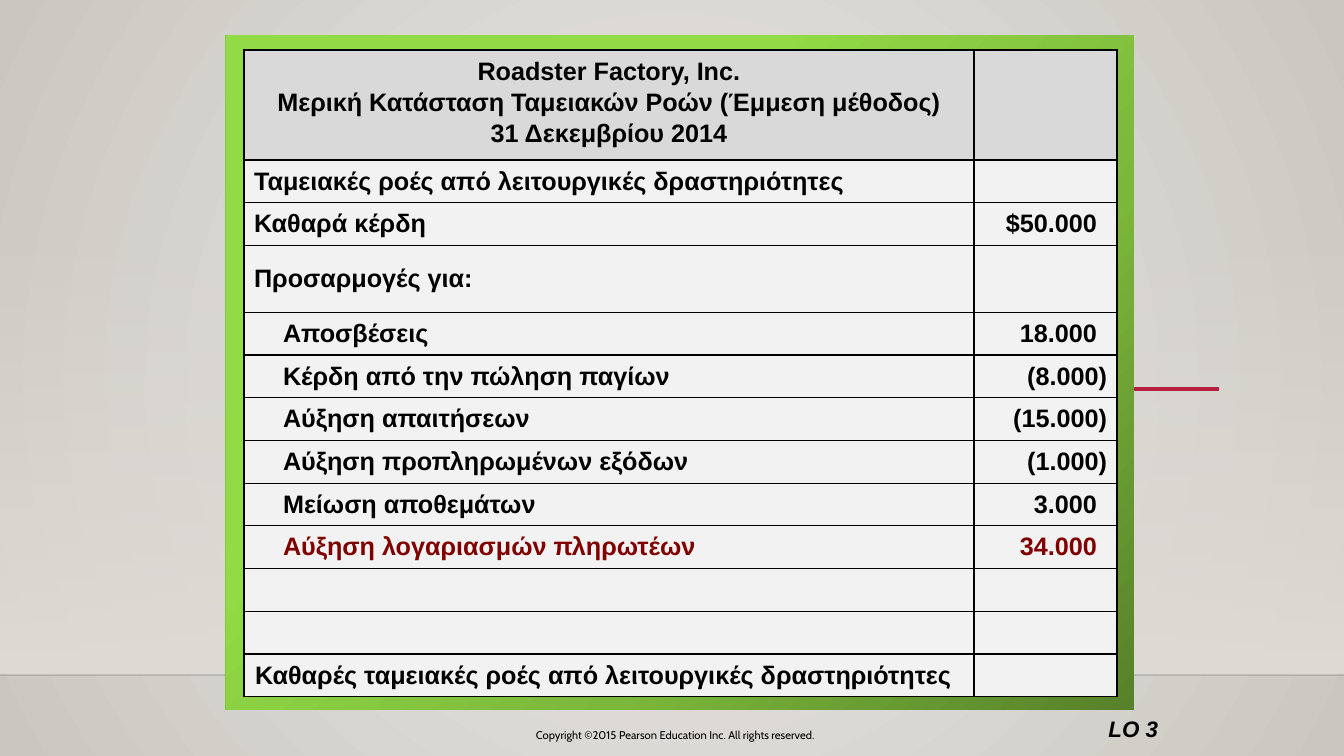
from dataclasses import dataclass

from lxml.etree import SubElement
from pptx import Presentation
from pptx.dml.color import RGBColor
from pptx.enum.shapes import MSO_CONNECTOR, MSO_SHAPE
from pptx.enum.text import MSO_ANCHOR, PP_ALIGN
from pptx.oxml.ns import qn
from pptx.util import Emu, Pt

BLACK = RGBColor(0x00, 0x00, 0x00)
MAROON = RGBColor(0x80, 0x00, 0x00)
CRIMSON = RGBColor(0xB7, 0x1E, 0x42)
HEADER_GREY = RGBColor(0xD9, 0xD9, 0xD9)
ROW_GREY = RGBColor(0xF2, 0xF2, 0xF2)
WALL_LIGHT = RGBColor(0xEC, 0xEA, 0xE7)
WALL_DARK = RGBColor(0xCA, 0xC7, 0xC1)
WALL_SHADE = RGBColor(0xDF, 0xDB, 0xD5)
GREEN_DARK = RGBColor(0x57, 0x81, 0x2A)
GREEN_MIDDLE = RGBColor(0x7B, 0xB7, 0x3B)
GREEN_LIGHT = RGBColor(0x92, 0xDA, 0x46)

EMU_PER_PX = 914400 / 100.8
SLIDE_WIDTH, SLIDE_HEIGHT = 1344, 756
FLOOR = 675
TABLE_LEFT, TABLE_TOP, TABLE_HEIGHT = 244, 50, 647
COLUMN_WIDTHS = (730, 143)
HEADER_HEIGHT, ADJUSTMENTS_HEIGHT = 110, 67
CELL_INSET, AMOUNT_INSET, ITEM_INDENT = 10, 20, 29


@dataclass(frozen=True)
class Stop:
    position: int
    color: RGBColor
    opacity: int = 100


@dataclass(frozen=True)
class Rule:
    left: int
    right: int
    y: int
    color: RGBColor
    width: float
    opacity: int = 100


@dataclass(frozen=True)
class Panel:
    left: int
    top: int
    width: int
    height: int
    angle: int
    stops: tuple[Stop, ...]


@dataclass(frozen=True)
class Caption:
    left: int
    top: int
    width: int
    height: int
    text: str
    font: str
    size: int
    alignment: PP_ALIGN
    emphasis: bool = False


@dataclass(frozen=True)
class Entry:
    label: str = ""
    amount: str = ""
    indent: int = 0
    color: RGBColor = BLACK
    height: int | None = None


PANELS = (
    Panel(0, 223, SLIDE_WIDTH, FLOOR - 223, 90,
          (Stop(0, WALL_SHADE, 0), Stop(100, WALL_SHADE))),
    Panel(226, 35, 908, 675, 225,
          (Stop(0, GREEN_DARK), Stop(33, GREEN_MIDDLE), Stop(65, GREEN_LIGHT))),
)
RULES = (
    Rule(0, SLIDE_WIDTH, FLOOR, BLACK, 1, 20),
    Rule(266, 1219, 389, CRIMSON, 2.5),
)
CAPTIONS = (
    Caption(1084, 710, 84, 37, "LO 3", "Arial", 16, PP_ALIGN.RIGHT, True),
    Caption(436, 723, 479, 25, "Copyright ©2015 Pearson Education Inc. All rights reserved.",
            "Cabin", 8, PP_ALIGN.CENTER),
)
HEADING = (
    "Roadster Factory, Inc.\n"
    "Μερική Κατάσταση Ταμειακών Ροών (Έμμεση μέθοδος)\n"
    "31 Δεκεμβρίου 2014"
)
ENTRIES = (
    Entry("Ταμειακές ροές από λειτουργικές δραστηριότητες"),
    Entry("Καθαρά κέρδη", "$50.000"),
    Entry("Προσαρμογές για:", height=ADJUSTMENTS_HEIGHT),
    Entry("Αποσβέσεις", "18.000", ITEM_INDENT),
    Entry("Κέρδη από την πώληση παγίων", "(8.000)", ITEM_INDENT),
    Entry("Αύξηση απαιτήσεων", "(15.000)", ITEM_INDENT),
    Entry("Αύξηση προπληρωμένων εξόδων", "(1.000)", ITEM_INDENT),
    Entry("Μείωση αποθεμάτων", "3.000", ITEM_INDENT),
    Entry("Αύξηση λογαριασμών πληρωτέων", "34.000", ITEM_INDENT, MAROON),
    Entry(),
    Entry(),
    Entry("Καθαρές ταμειακές ροές από λειτουργικές δραστηριότητες", indent=1),
)


def px(value: float) -> Emu:
    return Emu(round(value * EMU_PER_PX))


def add_color(parent, color: RGBColor, opacity: int = 100) -> None:
    element = SubElement(parent, qn("a:srgbClr"), val=str(color))
    if opacity < 100:
        SubElement(element, qn("a:alpha"), val=str(opacity * 1000))


def apply_gradient(owner, fill, stops: tuple[Stop, ...], angle: int | None = None) -> None:
    fill.gradient()
    gradient = owner.element.xpath(".//a:gradFill")[0]
    for child in list(gradient):
        gradient.remove(child)
    stop_list = SubElement(gradient, qn("a:gsLst"))
    for stop in stops:
        element = SubElement(stop_list, qn("a:gs"), pos=str(stop.position * 1000))
        add_color(element, stop.color, stop.opacity)
    if angle is None:
        radial = SubElement(gradient, qn("a:path"), path="circle")
        SubElement(radial, qn("a:fillToRect"), l="50000", t="50000", r="50000", b="50000")
    else:
        SubElement(gradient, qn("a:lin"), ang=str(angle * 60000), scaled="0")


def add_panel(slide, panel: Panel) -> None:
    shape = slide.shapes.add_shape(MSO_SHAPE.RECTANGLE, px(panel.left), px(panel.top),
                                   px(panel.width), px(panel.height))
    shape.shadow.inherit = False
    shape.line.fill.background()
    apply_gradient(shape, shape.fill, panel.stops, panel.angle)


def add_rule(slide, rule: Rule) -> None:
    connector = slide.shapes.add_connector(MSO_CONNECTOR.STRAIGHT, px(rule.left), px(rule.y),
                                           px(rule.right), px(rule.y))
    connector.line.width = Pt(rule.width)
    connector.line.fill.solid()
    solid = connector.element.xpath(".//a:ln/a:solidFill")[0]
    for child in list(solid):
        solid.remove(child)
    add_color(solid, rule.color, rule.opacity)
    SubElement(connector.element.spPr, qn("a:effectLst"))


def add_caption(slide, caption: Caption) -> None:
    box = slide.shapes.add_textbox(px(caption.left), px(caption.top),
                                   px(caption.width), px(caption.height))
    box.text_frame.word_wrap = True
    paragraph = box.text_frame.paragraphs[0]
    paragraph.text = caption.text
    paragraph.alignment = caption.alignment
    font = paragraph.font
    font.name, font.size = caption.font, Pt(caption.size)
    font.bold = font.italic = caption.emphasis
    font.color.rgb = BLACK


def format_cell(cell, text: str, fill: RGBColor, alignment: PP_ALIGN,
                color: RGBColor = BLACK, indent: int = 0, spacing: float = 1.0) -> None:
    cell.text = text
    for paragraph in cell.text_frame.paragraphs:
        paragraph.alignment = alignment
        paragraph.line_spacing = spacing
        if indent:
            properties = paragraph._p.get_or_add_pPr()
            properties.set("marL", str(px(indent)))
            properties.set("indent", "0")
        font = paragraph.font
        font.name, font.size, font.bold = "Arial", Pt(18), True
        font.color.rgb = color
    properties = cell._tc.get_or_add_tcPr()
    for side in ("a:lnL", "a:lnR", "a:lnT", "a:lnB"):
        border = SubElement(properties, qn(side), w=str(Pt(1)))
        add_color(SubElement(border, qn("a:solidFill")), BLACK)
    cell.fill.solid()
    cell.fill.fore_color.rgb = fill


def add_statement(slide) -> None:
    frame = slide.shapes.add_table(len(ENTRIES) + 1, len(COLUMN_WIDTHS), px(TABLE_LEFT),
                                   px(TABLE_TOP), px(sum(COLUMN_WIDTHS)), px(TABLE_HEIGHT))
    table = frame.table
    table.first_row = table.horz_banding = False
    for column, width in zip(table.columns, COLUMN_WIDTHS):
        column.width = px(width)
    table.rows[0].height = px(HEADER_HEIGHT)
    format_cell(table.cell(0, 0), HEADING, HEADER_GREY, PP_ALIGN.CENTER, spacing=1.1)
    format_cell(table.cell(0, 1), "", HEADER_GREY, PP_ALIGN.RIGHT)
    row_height = (TABLE_HEIGHT - HEADER_HEIGHT - ADJUSTMENTS_HEIGHT) / (len(ENTRIES) - 1)
    for index, entry in enumerate(ENTRIES, start=1):
        table.rows[index].height = px(entry.height or row_height)
        label, amount = table.cell(index, 0), table.cell(index, 1)
        format_cell(label, entry.label, ROW_GREY, PP_ALIGN.LEFT, entry.color, entry.indent)
        format_cell(amount, entry.amount, ROW_GREY, PP_ALIGN.RIGHT, entry.color)
        label.vertical_anchor = amount.vertical_anchor = MSO_ANCHOR.MIDDLE
        amount.margin_right = px(CELL_INSET if entry.amount.endswith(")") else AMOUNT_INSET)


def main() -> None:
    presentation = Presentation()
    presentation.slide_width, presentation.slide_height = px(SLIDE_WIDTH), px(SLIDE_HEIGHT)
    slide = presentation.slides.add_slide(presentation.slide_layouts[6])
    apply_gradient(slide, slide.background.fill, (Stop(0, WALL_LIGHT), Stop(100, WALL_DARK)))
    wall, frame = PANELS
    add_panel(slide, wall)
    for rule in RULES:
        add_rule(slide, rule)
    add_panel(slide, frame)
    add_statement(slide)
    for caption in CAPTIONS:
        add_caption(slide, caption)
    presentation.save("out.pptx")


if __name__ == "__main__":
    main()
